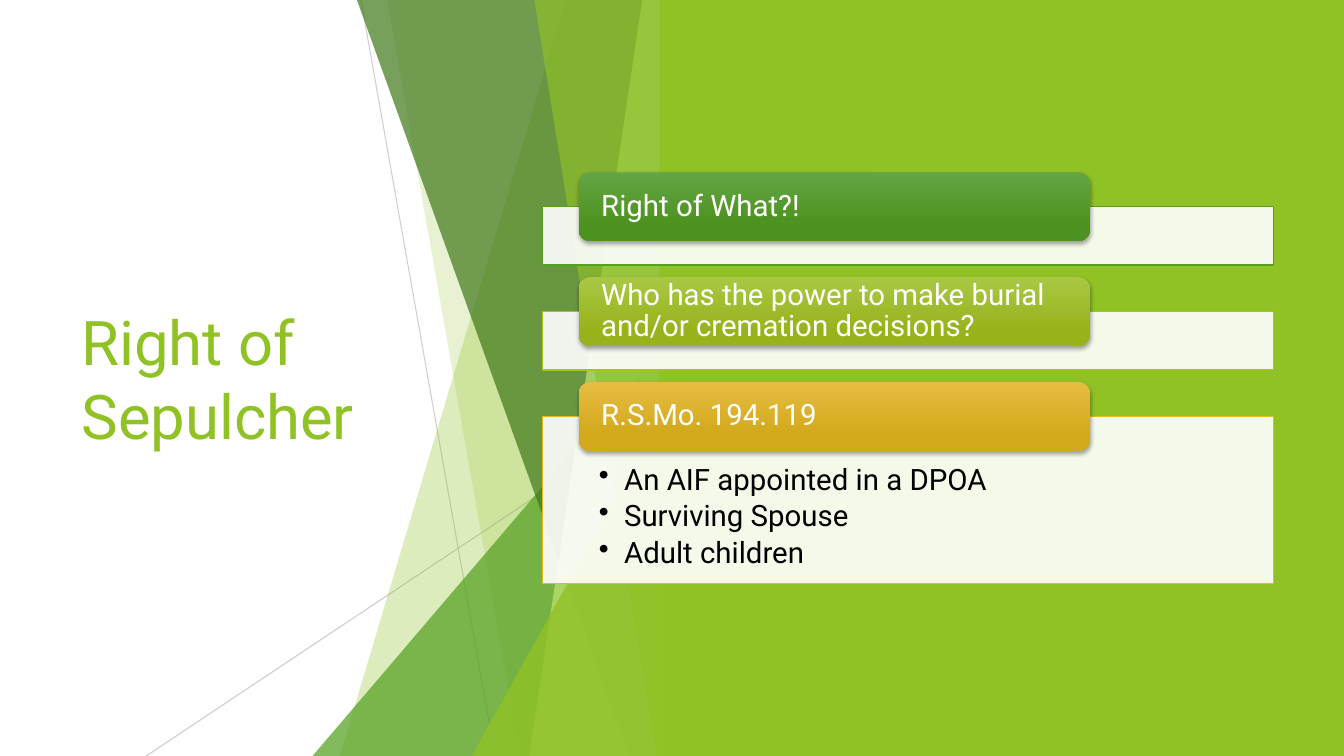
import lxml.etree
import pptx
import pptx.dml.color
import pptx.enum.shapes
import pptx.enum.text
import pptx.oxml.ns
import pptx.util

Inches, Pt = pptx.util.Inches, pptx.util.Pt
SHAPE = pptx.enum.shapes.MSO_SHAPE
ANCHOR = pptx.enum.text.MSO_ANCHOR
LEFT = pptx.enum.text.PP_ALIGN.LEFT
qn = pptx.oxml.ns.qn

COLORS = {
    "lime": "90C226", "green": "54A021", "forest": "3F7819", "pale": "C0E474",
    "gray": "BFBFBF", "white": "FFFFFF", "black": "000000",
    "olive": "A5C41F", "gold": "E6B91E",
}
EDGE = 6.66  # right side of the facets
HIGH = 7.5

# Facets from back to front: points, colour, opacity
FACETS = [
    ([(5.61, 0), (EDGE, 0), (EDGE, HIGH), (3.37, HIGH)], "lime", 30),
    ([(3.84, 0), (EDGE, 0), (EDGE, HIGH), (5.16, HIGH)], "lime", 20),
    ([(EDGE, 3.33), (EDGE, HIGH), (3.1, HIGH)], "green", 72),
    ([(3.54, 0), (EDGE, 0), (EDGE, HIGH), (6.24, HIGH)], "forest", 70),
    ([(6.37, 0), (EDGE, 0), (EDGE, HIGH), (5.25, HIGH)], "pale", 70),
    ([(5.3, 0), (EDGE, 0), (EDGE, HIGH), (6.51, HIGH)], "lime", 65),
    ([(EDGE, 3.93), (EDGE, HIGH), (4.68, HIGH)], "lime", 80),
]

# Topics: heading, border colour, gradient, panel height, bullets
TOPICS = [
    ("Right of What?!", "green", ("63A545", "4D921E"), 0.58, []),
    ("Who has the power to make burial and/or cremation decisions?",
     "olive", ("AAC744", "97B31C"), 0.58, []),
    ("R.S.Mo. 194.119", "gold", ("E7BC43", "D2A91B"), 1.66,
     ["An AIF appointed in a DPOA", "Surviving Spouse", "Adult children"]),
]


def rgb(name):
    return pptx.dml.color.RGBColor.from_string(COLORS.get(name, name))


def add_node(parent, tag, **attrs):
    node = lxml.etree.SubElement(parent, qn(tag))
    for key, value in attrs.items():
        node.set(key, str(value))
    return node


def set_alpha(shape, percent):
    for color in shape._element.spPr.iter(qn("a:srgbClr")):
        add_node(color, "a:alpha", val=percent * 1000)


def paint(shape, color, alpha=100):
    shape.shadow.inherit = False
    shape.fill.solid()
    shape.fill.fore_color.rgb = rgb(color)
    if alpha < 100:
        set_alpha(shape, alpha)
    shape.line.fill.background()


def add_facet(slide, points, color, alpha):
    spots = [(Inches(x), Inches(y)) for x, y in points]
    builder = slide.shapes.build_freeform(*spots[0])
    builder.add_line_segments(spots[1:], close=True)
    paint(builder.convert_to_shape(), color, alpha)


def add_line(slide, ends, alpha):
    line = slide.shapes.add_connector(
        pptx.enum.shapes.MSO_CONNECTOR.STRAIGHT, *map(Inches, ends))
    line.line.color.rgb = rgb("gray")
    line.line.width = Pt(0.75)
    set_alpha(line, alpha)
    add_node(line._element.spPr, "a:effectLst")


def add_box(slide, kind, *box):
    return slide.shapes.add_shape(kind, *map(Inches, box))


def write(shape, lines, size, color, anchor, insets, spacing=1.0):
    frame = shape.text_frame
    left, top, right, bottom = map(Inches, insets)
    form = {"word_wrap": True, "vertical_anchor": anchor,
            "margin_left": left, "margin_top": top,
            "margin_right": right, "margin_bottom": bottom}
    for key, value in form.items():
        setattr(frame, key, value)
    for i, text in enumerate(lines):
        para = frame.add_paragraph() if i else frame.paragraphs[0]
        para.alignment, para.line_spacing = LEFT, spacing
        run = para.add_run()
        run.text = text
        for key, value in {"name": "Roboto", "size": Pt(size)}.items():
            setattr(run.font, key, value)
        run.font.color.rgb = rgb(color)


def add_bullets(shape):
    for para in shape.text_frame.paragraphs:
        para.space_after = Pt(3.6)
        props = para._p.get_or_add_pPr()
        props.set("marL", str(Inches(0.25)))
        props.set("indent", str(-Inches(0.25)))
        add_node(props, "a:buChar", char="•")


def add_panel(slide, top, height, border, items):
    panel = add_box(slide, SHAPE.RECTANGLE, 5.38, top, 7.25, height)
    paint(panel, "white", 90)
    panel.line.color.rgb = rgb(border)
    panel.line.width = Pt(1)
    if items:
        write(panel, items, 21, "black", ANCHOR.TOP,
              (0.56, 0.48, 0.56, 0.16), 0.9)
        add_bullets(panel)


def add_card(slide, top, text, shades):
    card = add_box(slide, SHAPE.ROUNDED_RECTANGLE, 5.74, top, 5.07, 0.68)
    paint(card, "white")
    card.fill.gradient()
    card.fill.gradient_angle = 270
    for stop, shade, place in zip(card.fill.gradient_stops, shades, (0, 0.78)):
        stop.color.rgb = rgb(shade)
        stop.position = place
    # Soft shadow below the card
    effects = card._element.spPr.find(qn("a:effectLst"))
    shadow = add_node(effects, "a:outerShdw", blurRad=Pt(3), dist=Pt(2),
                      dir=90 * 60000, algn="ctr", rotWithShape=0)
    color = add_node(shadow, "a:srgbClr", val=COLORS["black"])
    add_node(color, "a:alpha", val=35000)
    write(card, [text], 21, "white", ANCHOR.MIDDLE, (0.19, 0, 0.19, 0), 0.9)


def main():
    deck = pptx.Presentation()
    deck.slide_width, deck.slide_height = Inches(13.33), Inches(HIGH)
    slide = deck.slides.add_slide(deck.slide_layouts[6])

    # Title
    title = slide.shapes.add_textbox(*map(Inches, (0.71, 1.51, 3.88, 4.48)))
    write(title, ["Right of Sepulcher"], 44, "lime", ANCHOR.MIDDLE,
          (0.1, 0.05, 0.1, 0.05))

    # Backdrop
    add_line(slide, (3.58, 0, 4.91, HIGH), 75)
    add_line(slide, (EDGE, 4.03, 1.45, HIGH), 80)
    for facet in FACETS:
        add_facet(slide, *facet)
    paint(add_box(slide, SHAPE.RECTANGLE, 6.54, 0, 6.79, HIGH), "lime")

    # Topics at an equal pitch
    for i, (text, border, shades, height, items) in enumerate(TOPICS):
        top = 1.71 + 1.04 * i
        add_panel(slide, top + 0.34, height, border, items)
        add_card(slide, top, text, shades)

    deck.save("out.pptx")


if __name__ == "__main__":
    main()
